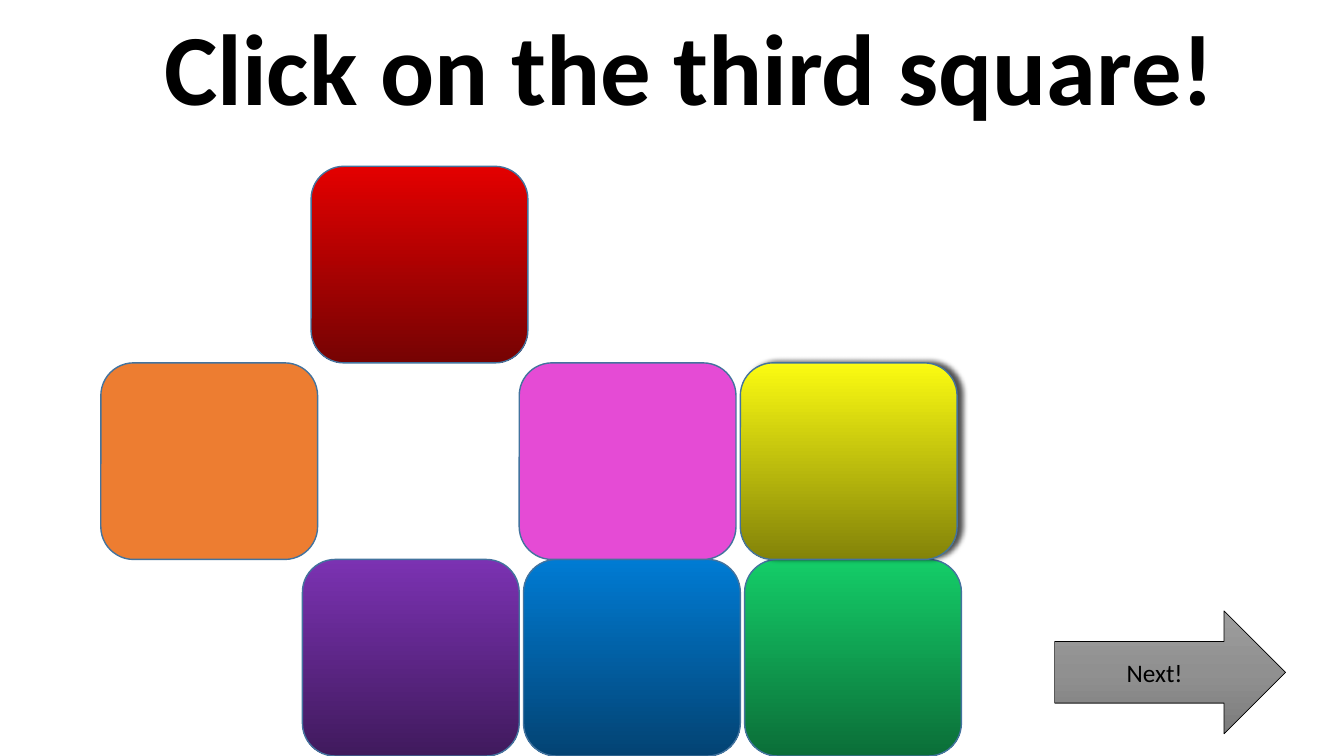
from copy import deepcopy

from lxml import etree
from pptx import Presentation
from pptx import util as u
from pptx.dml.color import RGBColor
from pptx.enum import shapes, text
from pptx.oxml.ns import qn

WIDE, HIGH = 13.33, 7.5
TILE_W, TILE_H = 2.15, 1.95
LEFT, TOP = 1, HIGH - 3 * TILE_H
STEP = 1.02  # column pitch, leaving a thin gap between tiles


def color(code):
    return RGBColor.from_string(code)


class Board:
    font = "Calibri"
    ink = "000000"
    edge = "43739E"

    def __init__(self, deck):
        self.slide = deck.slides.add_slide(deck.slide_layouts[6])

    def label(self, frame, words, size, bold=False):
        para = frame.paragraphs[0]
        para.alignment = text.PP_ALIGN.CENTER
        run = para.add_run()
        run.text = words
        run.font.name, run.font.size = self.font, u.Pt(size)
        run.font.bold = bold
        run.font.color.rgb = color(self.ink)

    def title(self, words, left, top, width, height):
        box = self.slide.shapes.add_textbox(*map(u.Inches, (left, top, width, height)))
        frame = box.text_frame
        frame.word_wrap = False
        frame.auto_size = text.MSO_AUTO_SIZE.SHAPE_TO_FIT_TEXT
        self.label(frame, words, 72, True)

    def paint(self, fill, codes):
        """Fill with one colour, or with evenly spread stops from top to bottom."""
        if len(codes) == 1:
            fill.solid()
            fill.fore_color.rgb = color(codes[0])
            return
        fill.gradient()
        fill.gradient_angle = 270
        first = fill.gradient_stops[0]._gs
        for _ in codes[2:]:
            first.addnext(deepcopy(first))
        for i, (stop, code) in enumerate(zip(fill.gradient_stops, codes)):
            stop.position = i / (len(codes) - 1)
            stop.color.rgb = color(code)

    def shape(self, kind, box, codes, edge, weight):
        item = self.slide.shapes.add_shape(kind, *map(u.Inches, box))
        item.shadow.inherit = False
        self.paint(item.fill, codes)
        item.line.color.rgb = color(edge)
        item.line.width = u.Pt(weight)
        return item

    def tile(self, col, row, *codes):
        box = (LEFT + col * TILE_W, TOP + row * TILE_H, TILE_W, TILE_H)
        kind = shapes.MSO_SHAPE.ROUNDED_RECTANGLE
        return self.shape(kind, box, codes, self.edge, 1)

    def shade(self, item, alpha, blur, dist, angle):
        effect = item._element.spPr.find(qn("a:effectLst"))
        outer = etree.SubElement(
            effect, qn("a:outerShdw"), blurRad=str(u.Pt(blur)),
            dist=str(u.Pt(dist)), dir=str(angle * 60000),
            algn="ctr", rotWithShape="0")
        tone = etree.SubElement(outer, qn("a:srgbClr"), val=self.ink)
        etree.SubElement(tone, qn("a:alpha"), val=str(alpha * 1000))

    def arrow(self, words, box, *codes):
        item = self.shape(shapes.MSO_SHAPE.RIGHT_ARROW, box, codes, self.ink, 0.5)
        item.text_frame.vertical_anchor = text.MSO_ANCHOR.MIDDLE
        self.label(item.text_frame, words, 18)


def main():
    deck = Presentation()
    deck.slide_width, deck.slide_height = u.Inches(WIDE), u.Inches(HIGH)
    board = Board(deck)
    board.title("Click on the third square!", 1.48, 0, 10.73, 1.31)

    base = [("7B32B2", "401A5D"), ("007BD3", "034373"), ("14CD68", "0B6E38")]
    for i, codes in enumerate(base):
        board.tile(0.93 + i * STEP, 2, *codes)

    board.tile(0, 1, "ED7D31")
    yellow = board.tile(1.93 + STEP, 1, "FBFB11", "838309")
    board.shade(yellow, 68, 4, 4, 347)
    board.tile(1.93, 1, "E54BD5")
    board.tile(0.97, 0, "E30000", "760303")

    board.arrow("Next!", (10.46, 6.06, 2.29, 1.22), "9D9D9D", "909090", "7C7C7C")
    deck.save("out.pptx")


if __name__ == "__main__":
    main()
